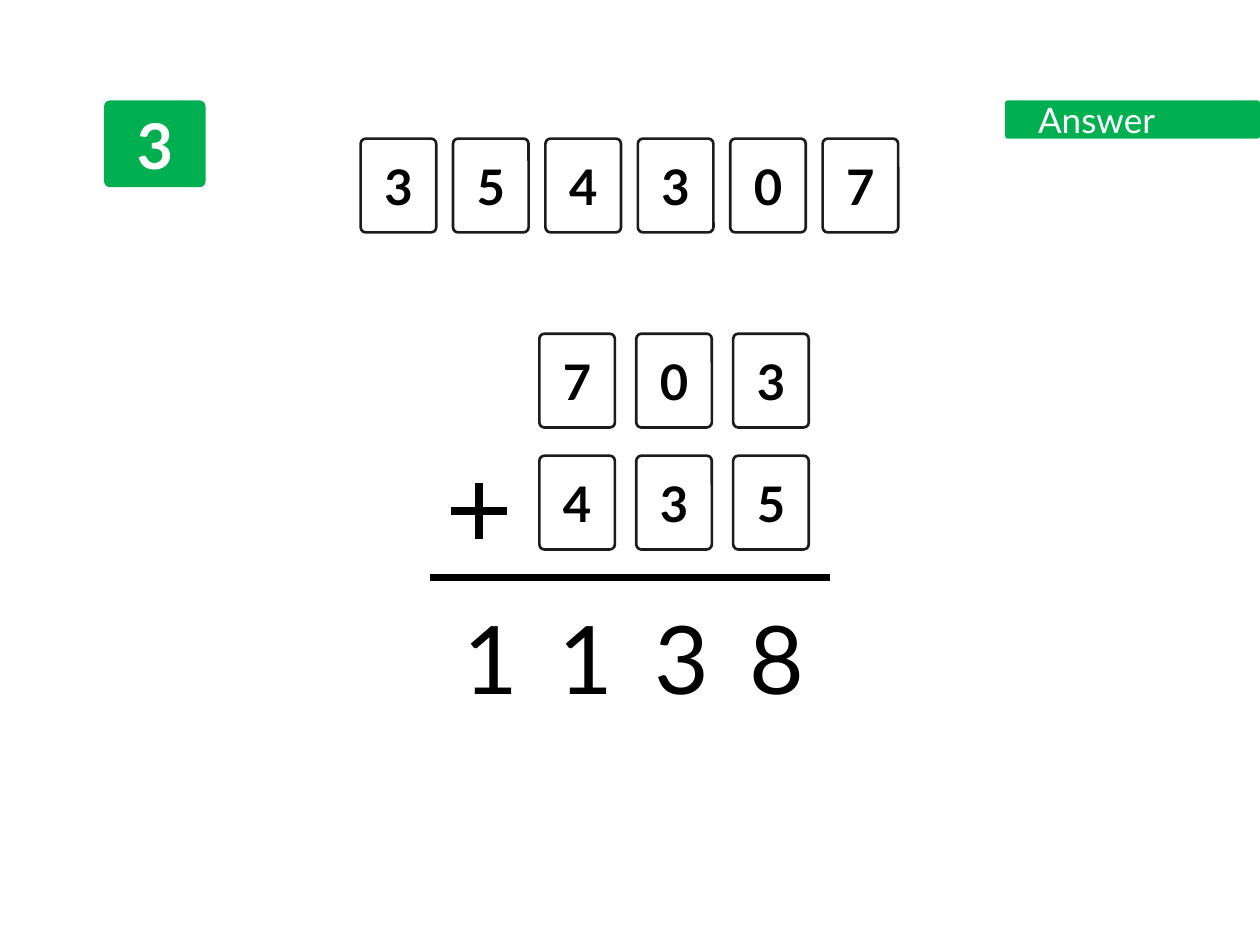
from pptx import Presentation
from pptx.dml.color import RGBColor
from pptx.enum.shapes import MSO_CONNECTOR, MSO_SHAPE
from pptx.enum.text import MSO_ANCHOR, MSO_AUTO_SIZE, PP_ALIGN
from pptx.oxml.ns import qn
from pptx.util import Pt
from lxml import etree

ROUND = MSO_SHAPE.ROUNDED_RECTANGLE
STRAIGHT = MSO_CONNECTOR.STRAIGHT
MIDDLE = MSO_ANCHOR.MIDDLE
GROW = MSO_AUTO_SIZE.SHAPE_TO_FIT_TEXT
CENTER = PP_ALIGN.CENTER
FONT = "Lato"
GREEN, WHITE, BLACK, INK = "00B050", "FFFFFF", "000000", "1C1C1C"


def paint(target, color):
    """Set a solid colour on a fill, or a plain colour on a line or font."""
    if hasattr(target, "solid"):
        target.solid()
        target = target.fore_color
    else:
        target = target.color
    target.rgb = RGBColor.from_string(color)


def write(shape, text, size, color, bold=False):
    """Put one centred run into a shape and return it."""
    line = shape.text_frame.paragraphs[0]
    line.alignment = CENTER
    run = line.add_run()
    run.text = text
    run.font.name = FONT
    run.font.size = Pt(size)
    run.font.bold = bold
    paint(run.font, color)
    return run


def add_box(slide, box, fill, text, size, color, bold=False, edge=None):
    """Add a rounded box with centred text and an optional outline."""
    shape = slide.shapes.add_shape(ROUND, *map(Pt, box))
    shape.shadow.inherit = False
    shape.adjustments[0] = 0.067
    paint(shape.fill, fill)
    if edge:
        paint(shape.line, edge)
        shape.line.width = Pt(1.5)
    else:
        shape.line.fill.background()
    shape.text_frame.word_wrap = True
    shape.text_frame.vertical_anchor = MIDDLE
    write(shape, text, size, color, bold)
    return shape


def add_cards(slide, digits, left, top, step):
    """Add a row of digit cards at an equal step."""
    for i, digit in enumerate(digits):
        box = (left + i * step, top, 43.2, 53.6)
        add_box(slide, box, WHITE, digit, 28, BLACK, True, INK)


def add_total(slide, digits, left, top, step):
    """Add the digits of the sum at an equal step."""
    for i, digit in enumerate(digits):
        box = (left + i * step, top, 39.6, 72.7)
        shape = slide.shapes.add_textbox(*map(Pt, box))
        shape.text_frame.word_wrap = True
        shape.text_frame.auto_size = GROW
        run = write(shape, digit, 54, BLACK)
        run.font._element.set("spc", "300")


def add_line(slide, *ends):
    """Add a thick black line between two points."""
    line = slide.shapes.add_connector(STRAIGHT, *map(Pt, ends))
    paint(line.line, BLACK)
    line.line.width = Pt(4.5)
    etree.SubElement(line._element.spPr, qn("a:effectLst"))


def add_plus(slide, x, y, arm):
    """Add a plus sign centred on a point."""
    add_line(slide, x, y + arm, x, y - arm)
    add_line(slide, x - arm, y, x + arm, y)


def main():
    """Build the answer slide and save it."""
    deck = Presentation()
    deck.slide_width, deck.slide_height = Pt(720), Pt(540)
    slide = deck.slides.add_slide(deck.slide_layouts[6])
    add_box(slide, (59.5, 57.4, 58, 49.6), GREEN, "3", 36, WHITE, True)
    add_line(slide, 245.6, 330, 474.4, 330)
    add_total(slide, "1138", 257.8, 339.1, 54.5)
    add_plus(slide, 273.8, 292, 16.2)
    add_cards(slide, "354307", 206.1, 79.2, 52.8)
    add_cards(slide, "703", 308.2, 190.7, 55.4)
    add_cards(slide, "435", 308.2, 260.4, 55.4)
    label = add_box(slide, (574.4, 57.4, 145.6, 21.8), GREEN, "Answer", 20, WHITE)
    label.text_frame.margin_right = Pt(48.2)
    deck.save("out.pptx")


if __name__ == "__main__":
    main()
